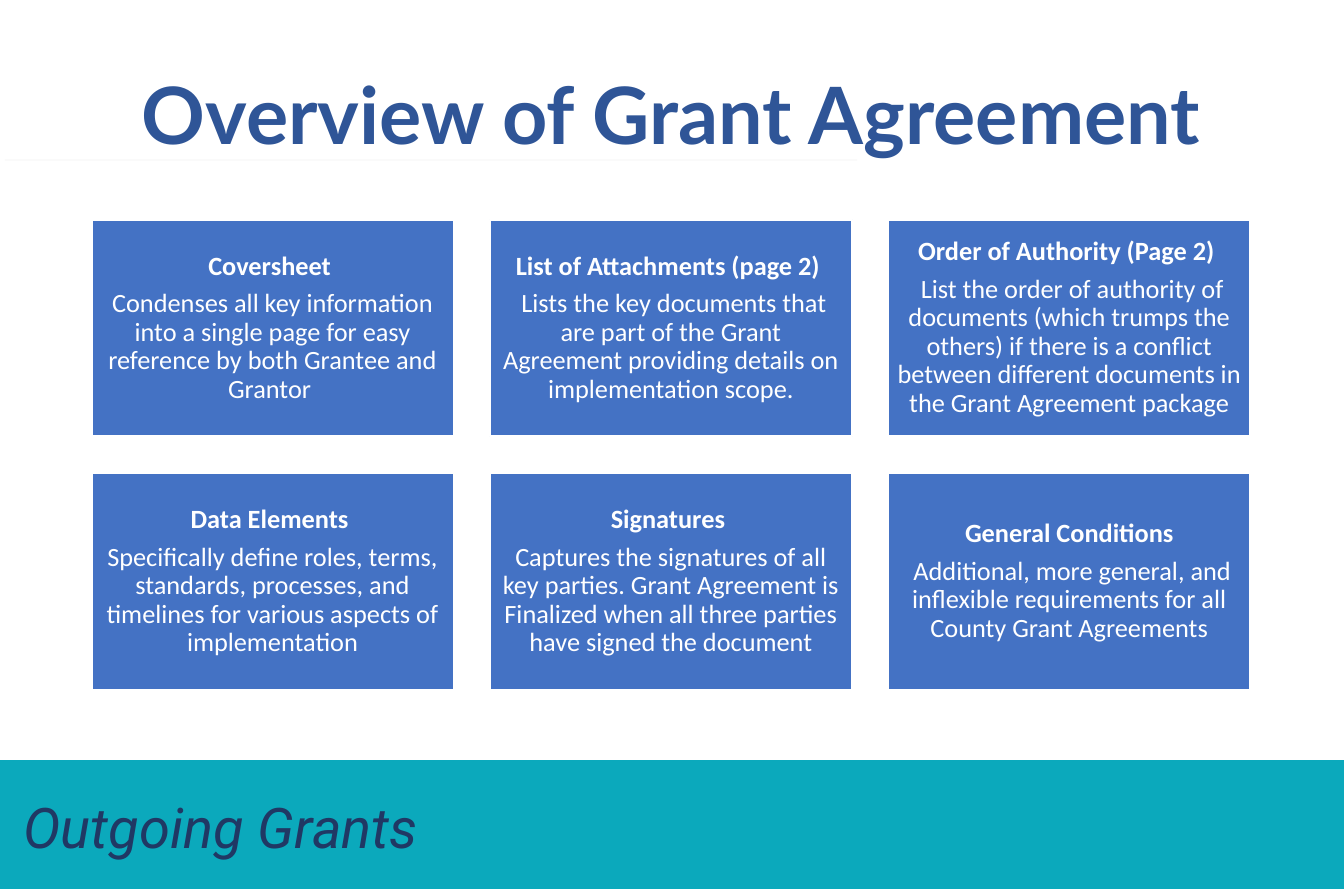
from lxml import etree
from pptx import Presentation
from pptx.dml.color import RGBColor
from pptx.enum.shapes import MSO_CONNECTOR, MSO_SHAPE
from pptx.enum.text import MSO_ANCHOR, PP_ALIGN
from pptx.oxml.ns import qn
from pptx.util import Cm, Pt

WHITE = RGBColor(0xFF, 0xFF, 0xFF)
TEAL = RGBColor(0x0B, 0xA9, 0xBC)
NAVY = RGBColor(0x20, 0x38, 0x64)
TITLE_BLUE = RGBColor(0x2F, 0x55, 0x97)
CARD_BLUE = RGBColor(0x44, 0x72, 0xC4)
PALE_GREY = RGBColor(0xE7, 0xE6, 0xE6)

# Heading, lead-in before the description, description
SECTIONS = [
    ("Coversheet ", "",
     "Condenses all key information into a single page for easy reference "
     "by both Grantee and Grantor "),
    ("List of Attachments (page 2) ", " ",
     "Lists the key documents that are part of the Grant Agreement "
     "providing details on implementation scope."),
    ("Order of Authority (Page 2) ", " ",
     "List the order of authority of documents (which trumps the others) "
     "if there is a conflict between different documents in the Grant "
     "Agreement package"),
    ("Data Elements ", "",
     "Specifically define roles, terms, standards, processes, and timelines "
     "for various aspects of implementation"),
    ("Signatures ", "",
     "Captures the signatures of all key parties. Grant Agreement is "
     "Finalized when all three parties have signed the document"),
    ("General Conditions", " ",
     "Additional, more general, and inflexible requirements for all County "
     "Grant Agreements"),
]
COLUMNS = 3
CARD_LEFT, CARD_TOP = 1.47, 3.53
CARD_WIDTH, CARD_HEIGHT = 5.82, 3.48
COLUMN_STEP, ROW_STEP = 6.4, 4.07


def add_rule(slide, left, right, y, color, width):
    rule = slide.shapes.add_connector(
        MSO_CONNECTOR.STRAIGHT, Cm(left), Cm(y), Cm(right), Cm(y))
    rule.line.color.rgb = color
    rule.line.width = Pt(width)
    etree.SubElement(rule._element.spPr, qn("a:effectLst"))
    return rule


def add_text(paragraph, text, font_name, size, color, bold=False, italic=False):
    run = paragraph.add_run()
    run.text = text
    run.font.name = font_name
    run.font.size = Pt(size)
    run.font.color.rgb = color
    run.font.bold = bold
    run.font.italic = italic


prs = Presentation()
prs.slide_width, prs.slide_height = Cm(21.59), Cm(14.28)
slide = prs.slides.add_slide(prs.slide_layouts[5])

# Footer band
add_rule(slide, 0, 21.59, 13.26, TEAL, 60)
footer = slide.shapes.add_textbox(Cm(0.13), Cm(12.6), Cm(9.04), Cm(1.35))
footer.text_frame.word_wrap = True
add_text(footer.text_frame.paragraphs[0], "Outgoing Grants", "Roboto", 25.5,
         NAVY, italic=True)

# Title
title = slide.shapes.title
title.left, title.top, title.width, title.height = (
    Cm(0.99), Cm(0.99), Cm(19.58), Cm(2.01))
title_frame = title.text_frame
title_frame.margin_left = title_frame.margin_right = 0
title_frame.margin_top = title_frame.margin_bottom = 0
title_frame.vertical_anchor = MSO_ANCHOR.MIDDLE
title_line = title_frame.paragraphs[0]
title_line.alignment = PP_ALIGN.CENTER
title_line.line_spacing = 0.7
add_text(title_line, "Overview of Grant Agreement", "Lato", 36, TITLE_BLUE,
         bold=True)

title_rule = add_rule(slide, 0.08, 13.77, 2.57, PALE_GREY, 0.5)
rule_color = title_rule.line._ln.find(".//" + qn("a:srgbClr"))
etree.SubElement(rule_color, qn("a:alpha"), val="25000")

# Section cards
for index, (heading, lead_in, description) in enumerate(SECTIONS):
    row, column = divmod(index, COLUMNS)
    card = slide.shapes.add_shape(
        MSO_SHAPE.RECTANGLE,
        Cm(CARD_LEFT + column * COLUMN_STEP), Cm(CARD_TOP + row * ROW_STEP),
        Cm(CARD_WIDTH), Cm(CARD_HEIGHT))
    card.shadow.inherit = False
    card.fill.solid()
    card.fill.fore_color.rgb = CARD_BLUE
    card.line.color.rgb = WHITE
    card.line.width = Pt(1)

    frame = card.text_frame
    frame.word_wrap = True
    frame.vertical_anchor = MSO_ANCHOR.MIDDLE
    frame.margin_left = frame.margin_right = Cm(0.13)
    frame.margin_top = frame.margin_bottom = Cm(0.13)
    heading_line, body = frame.paragraphs[0], frame.add_paragraph()
    for paragraph in (heading_line, body):
        paragraph.alignment = PP_ALIGN.CENTER
        paragraph.line_spacing = 0.9
        paragraph.space_after = Pt(4.2)
    add_text(heading_line, heading, "Calibri", 12, WHITE, bold=True)
    if lead_in:
        add_text(body, lead_in, "Calibri", 12, WHITE, bold=True)
    add_text(body, description, "Calibri", 12, WHITE)

prs.save("out.pptx")
